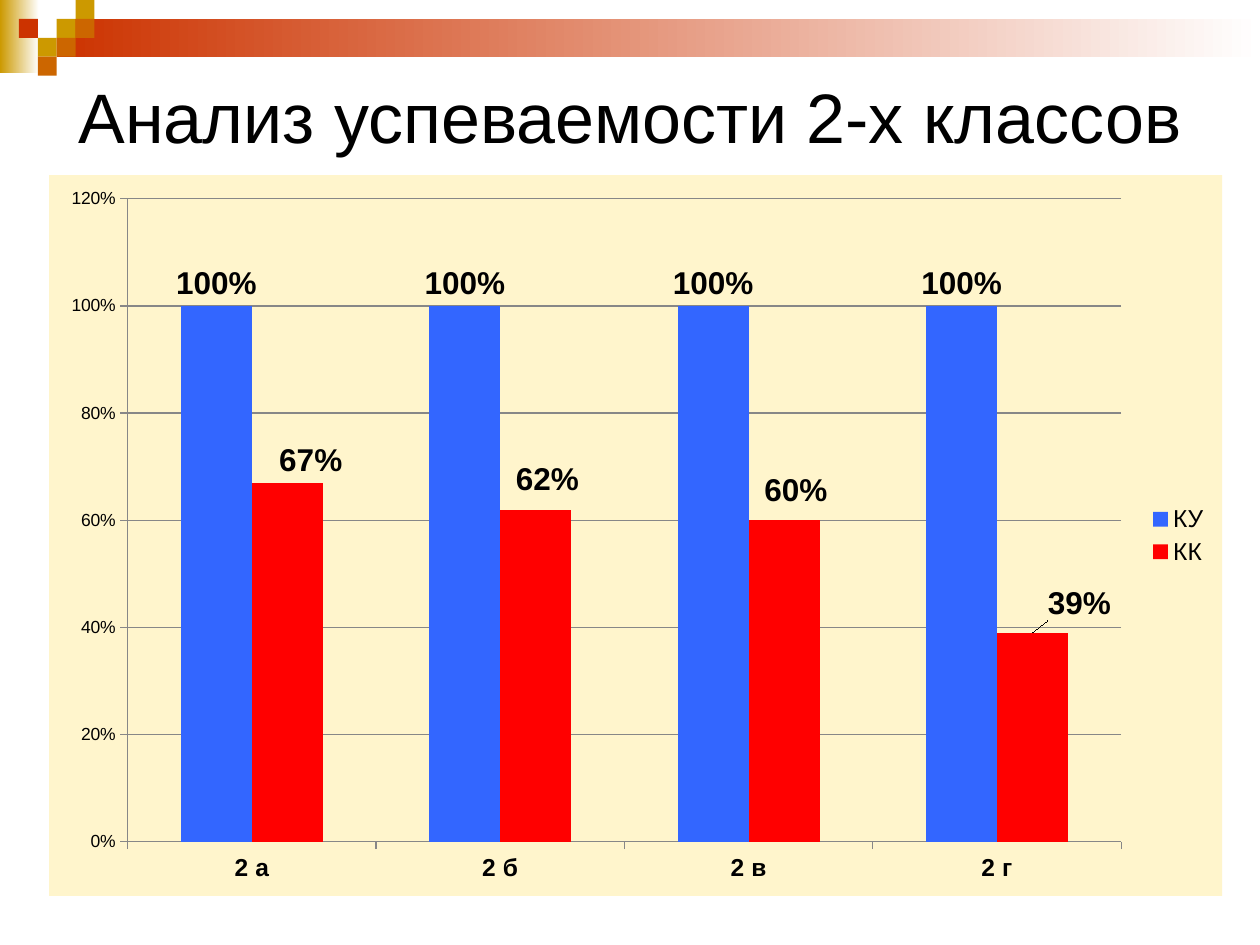
from lxml import etree
from pptx import Presentation
from pptx.chart.data import CategoryChartData
from pptx.dml.color import RGBColor
from pptx.enum.chart import XL_CHART_TYPE, XL_LABEL_POSITION, XL_LEGEND_POSITION, XL_TICK_MARK
from pptx.enum.shapes import MSO_SHAPE
from pptx.enum.text import MSO_ANCHOR, PP_ALIGN
from pptx.oxml import parse_xml
from pptx.oxml.ns import nsdecls, qn
from pptx.util import Inches, Pt

RECT = MSO_SHAPE.RECTANGLE
COLUMNS = XL_CHART_TYPE.COLUMN_CLUSTERED
OUTSIDE_END = XL_LABEL_POSITION.OUTSIDE_END
LEGEND_RIGHT = XL_LEGEND_POSITION.RIGHT
TICK_OUTSIDE = XL_TICK_MARK.OUTSIDE
MIDDLE = MSO_ANCHOR.MIDDLE
CENTER = PP_ALIGN.CENTER

WHITE = RGBColor(0xFF, 0xFF, 0xFF)
BLACK = RGBColor(0, 0, 0)
GOLD = RGBColor(0xCC, 0x99, 0x00)
ORANGE = RGBColor(0xCC, 0x66, 0x00)
BRICK = RGBColor(0xCC, 0x33, 0x00)
BLUE = RGBColor(0x33, 0x66, 0xFF)
RED = RGBColor(0xFF, 0, 0)
GRAY = RGBColor(0x87, 0x87, 0x87)
CREAM = RGBColor(0xFF, 0xF5, 0xCC)
FONT = "Arial"

CLASSES = ["2 а", "2 б", "2 в", "2 г"]
SERIES = [
    ("КУ", [1, 1, 1, 1], BLUE),
    ("КК", [0.67, 0.62, 0.6, 0.39], RED),
]
# Shift of each КК label, as a share of the chart's width and height
LABEL_SHIFTS = [(0.02, 0), (0.01, -0.01), (0.01, -0.01), (0.04, -0.01)]


def add_rect(slide, box, color, fade=False):
    """Borderless rectangle; with fade it runs from color to white."""
    s = slide.shapes.add_shape(RECT, *(Inches(v) for v in box))
    s.shadow.inherit = False
    s.line.fill.background()
    if fade:
        s.fill.gradient()
        s.fill.gradient_angle = 0
        for stop, stop_color, position in zip(s.fill.gradient_stops, (color, WHITE), (0, 1)):
            stop.color.rgb = stop_color
            stop.position = position
    else:
        s.fill.solid()
        s.fill.fore_color.rgb = color


def add_header(slide, left, top, width):
    add_rect(slide, (left, top, 0.31, 0.58), GOLD, fade=True)
    add_rect(slide, (left + 0.45, top + 0.15, width - 0.45, 0.3), BRICK, fade=True)
    side = 0.15
    squares = [(3, 1, GOLD), (4, 0, GOLD), (4, 1, ORANGE), (2, 2, GOLD),
               (1, 1, BRICK), (3, 2, ORANGE), (2, 3, ORANGE)]
    for col, row, color in squares:
        add_rect(slide, (left + col * side, top + row * side, side, side), color)


def add_title(slide, box, text):
    tf = slide.shapes.add_textbox(*(Inches(v) for v in box)).text_frame
    tf.word_wrap = True
    tf.vertical_anchor = MIDDLE
    tf.margin_left = tf.margin_right = Inches(0.05)
    p = tf.paragraphs[0]
    p.alignment = CENTER
    r = p.add_run()
    r.text = text
    style_font(r.font, 40)


def style_font(font, size, bold=False):
    font.name = FONT
    font.size = Pt(size)
    font.bold = bold
    font.color.rgb = BLACK


def manual_layout(**values):
    layout = parse_xml(f"<c:layout {nsdecls('c')}><c:manualLayout/></c:layout>")
    for name, value in values.items():
        etree.SubElement(layout[0], qn(f"c:{name}")).set("val", str(value))
    return layout


def set_plot_area(chart):
    """Fill the chart's background and fix the inner plot rectangle."""
    space = chart.element
    fill = parse_xml(
        f"<c:spPr {nsdecls('c', 'a')}><a:solidFill><a:srgbClr val=\"{CREAM}\"/></a:solidFill>"
        "<a:ln><a:noFill/></a:ln></c:spPr>")
    space.find(qn("c:chart")).addnext(fill)
    area = space.find(".//" + qn("c:plotArea"))
    for old in area.findall(qn("c:layout")):
        area.remove(old)
    area.insert(0, manual_layout(layoutTarget="inner", xMode="edge", yMode="edge",
                                 x=0.067, y=0.033, w=0.847, h=0.892))


def style_axes(chart):
    for axis, size, bold in ((chart.category_axis, 14, True), (chart.value_axis, 10, False)):
        axis.major_tick_mark = TICK_OUTSIDE
        axis.format.line.color.rgb = GRAY
        style_font(axis.tick_labels.font, size, bold)
    axis = chart.value_axis
    axis.minimum_scale, axis.maximum_scale, axis.major_unit = 0, 1.2, 0.2
    axis.tick_labels.number_format = "0%"
    axis.tick_labels.number_format_is_linked = False
    axis.has_major_gridlines = True
    axis.major_gridlines.format.line.color.rgb = GRAY


def style_series(series, color):
    series.format.fill.solid()
    series.format.fill.fore_color.rgb = color
    labels = series.data_labels
    labels.show_value = True
    labels.number_format = "0%"
    labels.number_format_is_linked = False
    labels.position = OUTSIDE_END
    style_font(labels.font, 18, True)


def shift_labels(series, shifts):
    for i, _ in enumerate(shifts):
        label = series.points[i].data_label
        style_font(label.font, 18, True)
        label.position = OUTSIDE_END
    points = series.data_labels._element.findall(qn("c:dLbl"))
    for point, (x, y) in zip(points, shifts):
        point.find(qn("c:idx")).addnext(manual_layout(x=x, y=y))


def add_results_chart(slide, box):
    data = CategoryChartData(number_format="0%")
    data.categories = CLASSES
    for name, values, _ in SERIES:
        data.add_series(name, values)
    chart = slide.shapes.add_chart(COLUMNS, *(Inches(v) for v in box), data).chart
    style_font(chart.font, 10)
    chart.has_title = False
    chart.has_legend = True
    chart.legend.position = LEGEND_RIGHT
    chart.legend.include_in_layout = False
    style_font(chart.legend.font, 14)
    set_plot_area(chart)
    style_axes(chart)
    plot = chart.plots[0]
    plot.vary_by_categories = False
    plot.gap_width, plot.overlap = 150, 0
    for series, (_, _, color) in zip(plot.series, SERIES):
        style_series(series, color)
    shift_labels(plot.series[1], LABEL_SHIFTS)


def main():
    prs = Presentation()
    prs.slide_width, prs.slide_height = Inches(10), Inches(7.5)
    slide = prs.slides.add_slide(prs.slide_layouts[6])
    add_header(slide, 0, 0, 10)
    add_title(slide, (0.5, 0.5, 9, 0.84), "Анализ успеваемости 2-х классов")
    add_results_chart(slide, (0.39, 1.39, 9.31, 5.72))
    prs.save("out.pptx")


if __name__ == "__main__":
    main()
